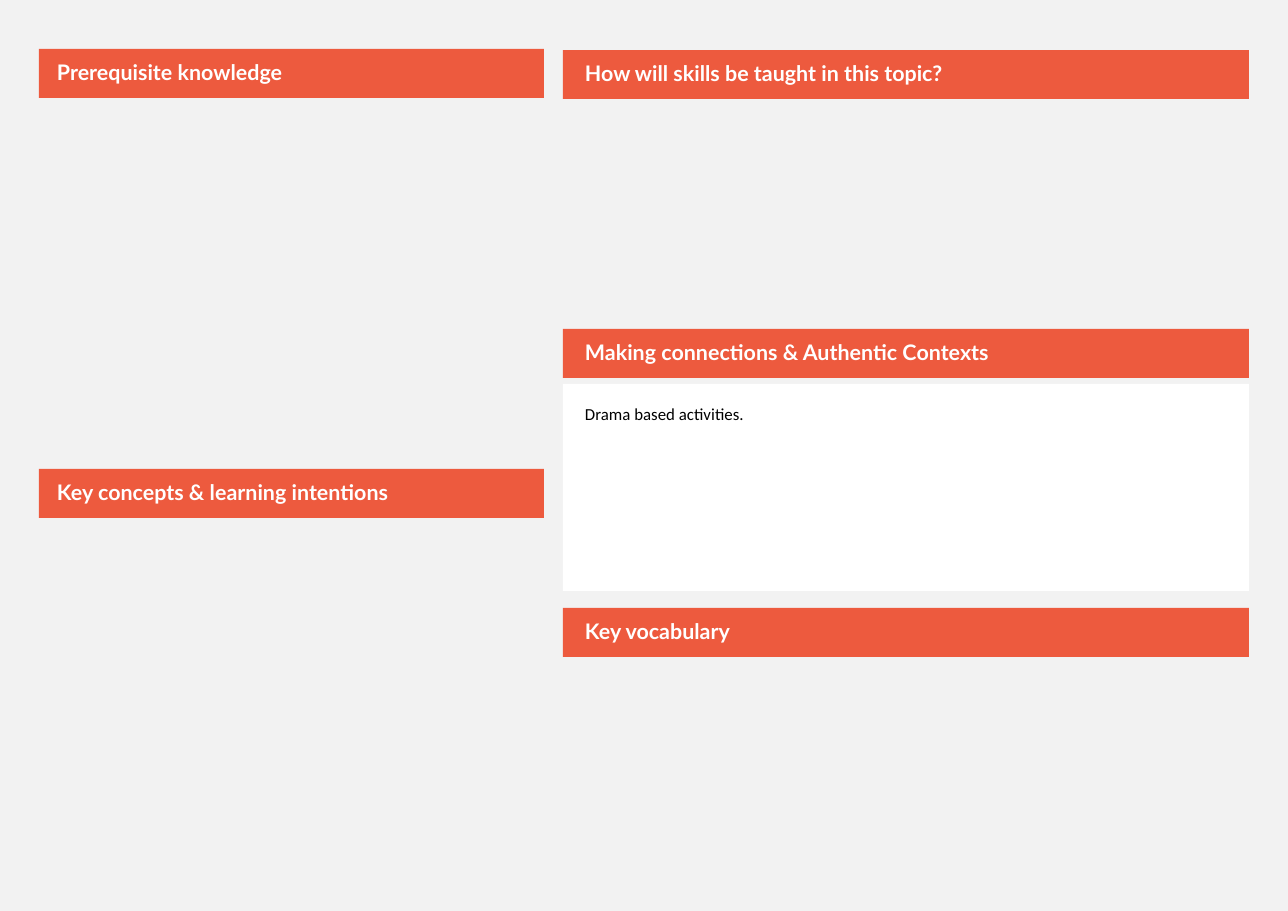
from pptx import Presentation
from pptx.dml.color import RGBColor
from pptx.enum.shapes import MSO_SHAPE as Shape
from pptx.enum.text import MSO_ANCHOR as Anchor, PP_ALIGN as Align
from pptx.util import Pt

EMU_PER_PX = 8298
PAGE_WIDTH, PAGE_HEIGHT = 1288, 911
LEFT_COLUMN = (39, 505, 18)
RIGHT_COLUMN = (563, 686, 22)
HEADING_HEIGHT = 49


def px(length):
    """Turn pixels into EMU."""
    return length * EMU_PER_PX


def color(code):
    """Turn a hex string into a colour."""
    return RGBColor.from_string(code)


class Planner:
    """Hold the style and the current slide of the topic planner."""

    accent, paper, white, ink = "ED5A3E", "F2F2F2", "FFFFFF", "000000"
    heading_font, body_font = "Lato", "Calibri"

    def __init__(self, deck):
        """Add a blank slide with the paper background."""
        self.page = deck.slides.add_slide(deck.slide_layouts[6])
        fill = self.page.background.fill
        fill.solid()
        fill.fore_color.rgb = color(self.paper)

    def panel(self, left, top, width, height, fill, insets, anchor):
        """Add a plain filled rectangle and return its text frame."""
        box = self.page.shapes.add_shape(
            Shape.RECTANGLE, px(left), px(top), px(width), px(height))
        box.shadow.inherit = False
        box.fill.solid()
        box.fill.fore_color.rgb = color(fill)
        box.line.fill.background()
        frame = box.text_frame
        frame.word_wrap = True
        frame.vertical_anchor = anchor
        (frame.margin_left, frame.margin_top,
         frame.margin_right, frame.margin_bottom) = map(px, insets)
        return frame

    def add_text(self, frame, text, font, size, ink, bold=False):
        """Put one left-aligned line into a text frame."""
        para = frame.paragraphs[0]
        para.alignment = Align.LEFT
        para.line_spacing = 0.9
        para.space_before = Pt(11)
        span = para.add_run()
        span.text = text
        span.font.name = font
        span.font.size = Pt(size)
        span.font.bold = bold
        span.font.color.rgb = color(ink)

    def heading(self, column, top, text):
        """Add a coloured section bar with its title."""
        left, width, indent = column
        frame = self.panel(left, top, width, HEADING_HEIGHT, self.accent,
                           (indent, 6, 11, 6), Anchor.MIDDLE)
        self.add_text(frame, text, self.heading_font, 14, self.white, bold=True)

    def body(self, column, top, height, text):
        """Add a white section body with its text."""
        left, width, indent = column
        frame = self.panel(left, top, width, height, self.white,
                           (indent,) * 4, Anchor.TOP)
        self.add_text(frame, text, self.body_font, 11, self.ink)


def main():
    """Build and save the planner."""
    deck = Presentation()
    deck.slide_width, deck.slide_height = px(PAGE_WIDTH), px(PAGE_HEIGHT)
    planner = Planner(deck)
    for column, top, text in (
        (LEFT_COLUMN, 49, "Prerequisite knowledge"),
        (LEFT_COLUMN, 469, "Key concepts & learning intentions"),
        (RIGHT_COLUMN, 50, "How will skills be taught in this topic?"),
        (RIGHT_COLUMN, 329, "Making connections & Authentic Contexts"),
        (RIGHT_COLUMN, 608, "Key vocabulary"),
    ):
        planner.heading(column, top, text)
    planner.body(RIGHT_COLUMN, 384, 207, "Drama based activities.")
    deck.save("out.pptx")


if __name__ == "__main__":
    main()
